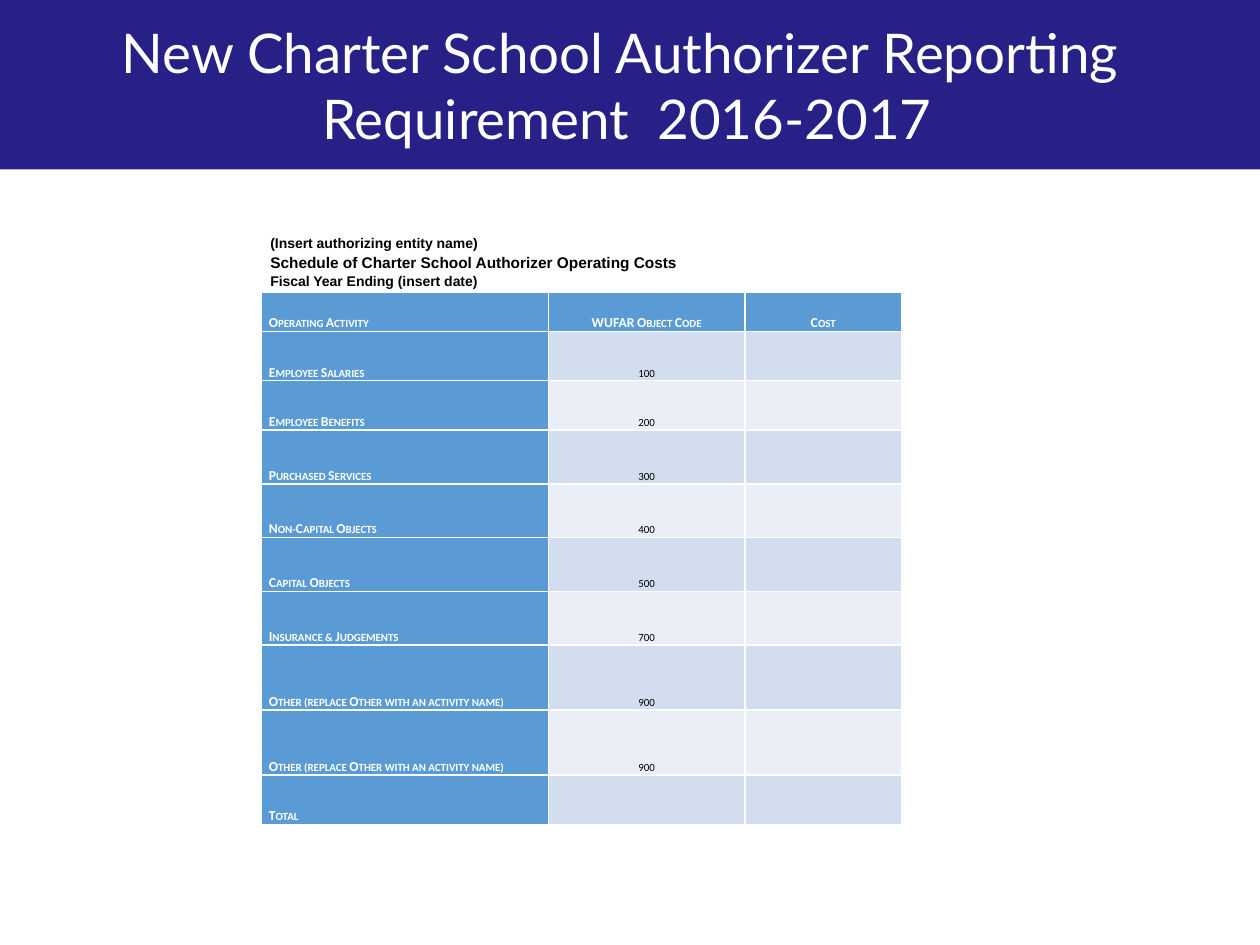
import dataclasses
import typing

import pptx
import pptx.dml.color
import pptx.enum.shapes
import pptx.enum.text
import pptx.oxml.ns
import pptx.oxml.xmlchemy
import pptx.slide
import pptx.table
import pptx.text.text
import pptx.util

Cm = pptx.util.Cm
Pt = pptx.util.Pt
ALIGN = pptx.enum.text.PP_ALIGN
ANCHOR = pptx.enum.text.MSO_ANCHOR

COLOURS = {
    "banner": "262087",
    "white": "FFFFFF",
    "black": "000000",
    "heading": "5B9BD5",
    "odd row": "D2DEEF",
    "even row": "EAEFF7",
}
BANNER_HEIGHT = Cm(3.5)
COLUMN_WIDTHS = (Cm(5.92), Cm(4.06), Cm(3.23))
COLUMN_HEADINGS = ("Operating Activity", "WUFAR Object Code", "Cost")
HEADING_ROW_HEIGHT = Cm(0.81)


@dataclasses.dataclass(frozen=True)
class Activity:
    name: str
    code: str
    height: float


@dataclasses.dataclass(frozen=True)
class HeaderLine:
    text: str
    size: float


ACTIVITIES = (
    Activity("Employee Salaries", "100", 1.02),
    Activity("Employee Benefits", "200", 1.02),
    Activity("Purchased Services", "300", 1.11),
    Activity("Non-Capital Objects", "400", 1.11),
    Activity("Capital Objects", "500", 1.11),
    Activity("Insurance & Judgements", "700", 1.11),
    Activity("Other (replace Other with an activity name)", "900", 1.34),
    Activity("Other (replace Other with an activity name)", "900", 1.34),
    Activity("Total", "", 1.02),
)
HEADER_LINES = (
    HeaderLine("(Insert authorizing entity name)", 8.2),
    HeaderLine("Schedule of Charter School Authorizer Operating Costs", 9),
    HeaderLine("Fiscal Year Ending (insert date)", 8.2),
)


def rgb(name: str) -> pptx.dml.color.RGBColor:
    return pptx.dml.color.RGBColor.from_string(COLOURS[name])


def set_font(font: pptx.text.text.Font, name: str, size: float, colour: str, bold: bool) -> None:
    font.name = name
    font.size = Pt(size)
    font.bold = bold
    font.color.rgb = rgb(colour)


def place(shape: typing.Any, left: float, top: float, width: float, height: int) -> None:
    shape.left, shape.top = Cm(left), Cm(top)
    shape.width, shape.height = Cm(width), height


def add_banner(page: pptx.slide.Slide, width: int) -> None:
    """Draw the title band behind the placeholders."""
    banner = page.shapes.add_shape(
        pptx.enum.shapes.MSO_SHAPE.RECTANGLE, 0, 0, width, BANNER_HEIGHT)
    banner.shadow.inherit = False
    banner.fill.solid()
    banner.fill.fore_color.rgb = rgb("banner")
    banner.line.fill.background()
    page.shapes._spTree.insert(2, banner._element)


def fill_title(page: pptx.slide.Slide) -> None:
    title = page.shapes.title
    place(title, 1.52, 0, 22.86, BANNER_HEIGHT)
    frame = title.text_frame
    frame.text = "New Charter School Authorizer Reporting \vRequirement  2016-2017"
    frame.auto_size = pptx.enum.text.MSO_AUTO_SIZE.NONE
    frame.vertical_anchor = ANCHOR.MIDDLE
    para = frame.paragraphs[0]
    para.alignment = ALIGN.CENTER
    para.space_before = Pt(0)
    set_font(para.font, "Lato", 32, "white", False)


def fill_schedule_header(page: pptx.slide.Slide) -> None:
    body = page.placeholders[1]
    place(body, 5.38, 4.75, 21.46 - 0.9, Cm(1.3))
    frame = body.text_frame
    frame.auto_size = pptx.enum.text.MSO_AUTO_SIZE.NONE
    frame.vertical_anchor = ANCHOR.TOP
    frame.margin_left = frame.margin_right = Cm(0.2)
    frame.margin_top = frame.margin_bottom = Cm(0.1)
    frame.text = "\n".join(line.text for line in HEADER_LINES)
    for index, (para, line) in enumerate(zip(frame.paragraphs, HEADER_LINES)):
        properties = para._p.get_or_add_pPr()
        properties.set("marL", "0")
        properties.set("indent", "0")
        properties.append(pptx.oxml.xmlchemy.OxmlElement("a:buNone"))
        para.space_before = Pt(0.6 if index else 0)
        para.alignment = ALIGN.LEFT
        set_font(para.font, "Arial", line.size, "black", True)


def fill_cell(cell: pptx.table._Cell, text: str, fill: str, centred: bool) -> None:
    """Heading-coloured cells get bold white small capitals, others plain black."""
    is_heading = fill == "heading"
    cell.fill.solid()
    cell.fill.fore_color.rgb = rgb(fill)
    cell.margin_left = cell.margin_right = Cm(0.15)
    cell.margin_top = cell.margin_bottom = 0
    cell.vertical_anchor = ANCHOR.BOTTOM
    cell.text = text
    para = cell.text_frame.paragraphs[0]
    para.alignment = ALIGN.CENTER if centred else ALIGN.LEFT
    set_font(para.font, "Calibri", 8, "white" if is_heading else "black", is_heading)
    para._p.pPr.find(pptx.oxml.ns.qn("a:defRPr")).set("cap", "small")


def add_cost_table(page: pptx.slide.Slide) -> None:
    heights = (HEADING_ROW_HEIGHT, *(Cm(activity.height) for activity in ACTIVITIES))
    table = page.shapes.add_table(
        len(heights), len(COLUMN_WIDTHS), Cm(5.4), Cm(6.03),
        sum(COLUMN_WIDTHS), sum(heights)).table
    table.first_col = True
    for column, width in zip(table.columns, COLUMN_WIDTHS):
        column.width = width
    for row, height in zip(table.rows, heights):
        row.height = height

    rows = (COLUMN_HEADINGS, *((item.name, item.code, "") for item in ACTIVITIES))
    for row_index, texts in enumerate(rows):
        band = "odd row" if row_index % 2 else "even row"
        for column_index, text in enumerate(texts):
            is_heading = row_index == 0 or column_index == 0
            fill_cell(table.cell(row_index, column_index), text,
                      "heading" if is_heading else band, column_index > 0)


def main() -> None:
    deck = pptx.Presentation()
    deck.slide_width, deck.slide_height = Cm(26.01), Cm(19.51)
    page = deck.slides.add_slide(deck.slide_layouts[1])
    add_banner(page, deck.slide_width)
    fill_title(page)
    fill_schedule_header(page)
    add_cost_table(page)
    deck.save("out.pptx")


if __name__ == "__main__":
    main()
